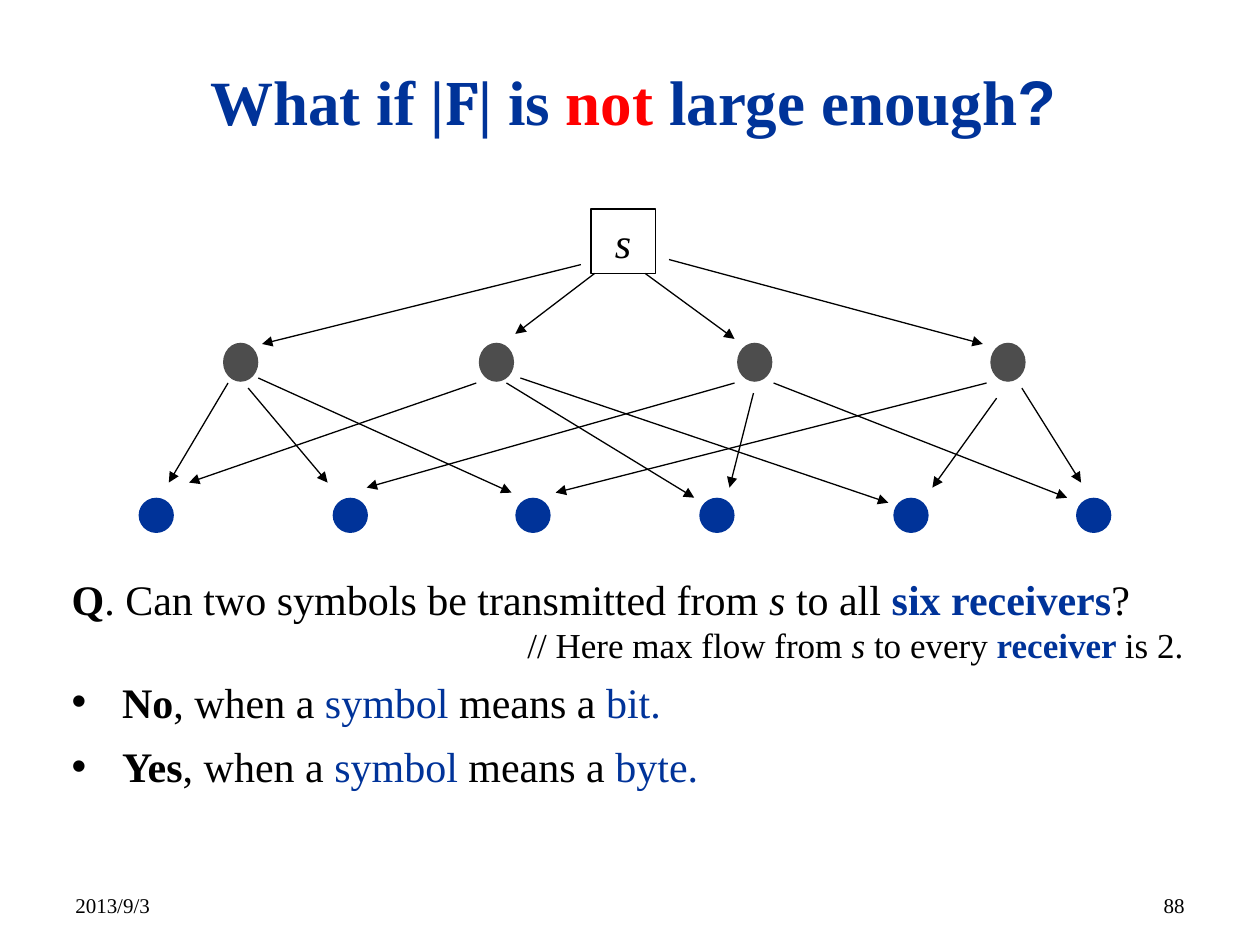
from lxml.etree import SubElement
from pptx import Presentation
from pptx.dml.color import RGBColor
from pptx.enum.shapes import MSO_CONNECTOR, MSO_SHAPE
from pptx.enum.text import MSO_ANCHOR, PP_ALIGN
from pptx.oxml.ns import qn
from pptx.util import Inches, Pt

BLACK = RGBColor(0x00, 0x00, 0x00)
WHITE = RGBColor(0xFF, 0xFF, 0xFF)
NAVY = RGBColor(0x00, 0x33, 0x99)
RED = RGBColor(0xFF, 0x00, 0x00)
GRAY = RGBColor(0x4D, 0x4D, 0x4D)

SERIF = "Times New Roman"
BOLD = {"bold": True}
ITALIC = {"italic": True}
BLUE = {"color": NAVY}
KEY_TERM = {"color": NAVY, "bold": True}

# Positions inside the network box, in inches
RELAY_LEFTS, RELAY_TOP = (0.67, 2.7, 4.75, 6.76), 1.06
RECEIVER_LEFTS, RECEIVER_TOP = (0, 1.54, 2.99, 4.45, 5.99, 7.44), 2.29
SOURCE_ARROWS = [
    (3.62, 0.51, 2.99, 0.99), (3.51, 0.44, 0.98, 1.07),
    (4.02, 0.51, 4.73, 1.03), (4.21, 0.4, 6.7, 1.07),
]
RELAY_ARROWS = [
    (0.71, 1.38, 0.24, 2.17), (0.87, 1.42, 1.5, 2.17), (0.95, 1.34, 2.96, 2.25),
    (2.68, 1.38, 0.4, 2.17), (2.92, 1.38, 4.41, 2.29), (3.03, 1.34, 5.95, 2.33),
    (4.73, 1.38, 1.81, 2.21), (4.88, 1.46, 4.69, 2.21), (5.04, 1.38, 7.37, 2.29),
    (6.73, 1.38, 3.31, 2.25), (6.81, 1.5, 6.3, 2.21), (7.01, 1.42, 7.48, 2.17),
]


def add_runs(paragraph, runs, size):
    """Add (text, format) pairs; a format overrides the plain black serif."""
    for text, changes in runs:
        run = paragraph.add_run()
        run.text = text
        style = {"name": SERIF, "size": Pt(size), "color": BLACK, **changes}
        run.font.color.rgb = style.pop("color")
        for attribute, value in style.items():
            setattr(run.font, attribute, value)


def add_text_frame(slide, left, top, width, height, anchor=MSO_ANCHOR.TOP):
    box = slide.shapes.add_textbox(
        Inches(left), Inches(top), Inches(width), Inches(height))
    box.text_frame.word_wrap = True
    box.text_frame.vertical_anchor = anchor
    return box.text_frame


def add_line(slide, box, runs, size, align, anchor):
    paragraph = add_text_frame(slide, *box, anchor).paragraphs[0]
    paragraph.alignment = align
    add_runs(paragraph, runs, size)


def add_node(slide, preset, left, top, width, height, fill):
    node = slide.shapes.add_shape(
        preset, Inches(left), Inches(top), Inches(width), Inches(height))
    node.shadow.inherit = False
    node.fill.solid()
    node.fill.fore_color.rgb = fill
    node.line.fill.background()
    return node


def add_arrow(slide, x1, y1, x2, y2):
    arrow = slide.shapes.add_connector(
        MSO_CONNECTOR.STRAIGHT, Inches(x1), Inches(y1), Inches(x2), Inches(y2))
    arrow.line.color.rgb = BLACK
    arrow.line.width = Pt(0.75)
    SubElement(arrow.line._get_or_add_ln(), qn("a:tailEnd"), type="triangle")
    SubElement(arrow._element.spPr, qn("a:effectLst"))


def add_source(slide, left, top):
    source = add_node(slide, MSO_SHAPE.RECTANGLE, left, top, 0.51, 0.51, WHITE)
    source.line.color.rgb = BLACK
    source.line.width = Pt(0.75)
    source.text_frame.word_wrap = False
    source.text_frame.vertical_anchor = MSO_ANCHOR.MIDDLE
    label = source.text_frame.paragraphs[0]
    label.alignment = PP_ALIGN.CENTER
    add_runs(label, [("s", ITALIC)], 24)


def add_network(slide, left, top):
    for relay_left in RELAY_LEFTS:
        add_node(slide, MSO_SHAPE.OVAL, left + relay_left, top + RELAY_TOP,
                 0.28, 0.31, GRAY)
    add_source(slide, left + 3.59, top)
    for receiver_left in RECEIVER_LEFTS:
        add_node(slide, MSO_SHAPE.OVAL, left + receiver_left, top + RECEIVER_TOP,
                 0.28, 0.28, NAVY)
    for x1, y1, x2, y2 in SOURCE_ARROWS + RELAY_ARROWS:
        add_arrow(slide, left + x1, top + y1, left + x2, top + y2)


def add_bullet(paragraph):
    properties = paragraph._p.get_or_add_pPr()
    properties.set("marL", str(Inches(0.4)))
    properties.set("indent", str(-Inches(0.4)))
    SubElement(properties, qn("a:buFont"), typeface="Arial")
    SubElement(properties, qn("a:buChar"), char="•")


def add_question(slide, left, top, width, height):
    frame = add_text_frame(slide, left, top, width, height)
    question = frame.paragraphs[0]
    question.space_before = Pt(8)
    add_runs(question, [
        ("Q", BOLD), (". Can two symbols be transmitted from ", {}), ("s", ITALIC),
        (" to all ", {}), ("six receivers", KEY_TERM), ("?", {})], 24)

    remark = frame.add_paragraph()
    remark.alignment = PP_ALIGN.RIGHT
    add_runs(remark, [
        ("// Here max flow from ", {}), ("s", ITALIC), (" to every ", {}),
        ("receiver ", KEY_TERM), ("is 2.", {})], 20)

    for answer, unit, gap in (("No", "bit", 6), ("Yes", "byte", 8)):
        paragraph = frame.add_paragraph()
        paragraph.space_before = Pt(gap)
        add_bullet(paragraph)
        add_runs(paragraph, [
            (answer, BOLD), (", when a ", {}), ("symbol ", BLUE),
            ("means a", {}), (f" {unit}.", BLUE)], 24)


def add_title(slide, box):
    title = [
        ("What if |", KEY_TERM), ("F", {**KEY_TERM, "name": "Cambria"}),
        ("| is ", KEY_TERM), ("not ", {"color": RED, "bold": True}),
        ("large enough", KEY_TERM), ("?", {**KEY_TERM, "name": "Arial"})]
    add_line(slide, box, title, 36, PP_ALIGN.CENTER, MSO_ANCHOR.MIDDLE)


def add_footer(slide, left, top, width, height):
    column = 2.33
    for x, text, align in ((left, "2013/9/3", PP_ALIGN.LEFT),
                           (left + width - column, "88", PP_ALIGN.RIGHT)):
        add_line(slide, (x, top, column, height), [(text, {})], 12,
                 align, MSO_ANCHOR.BOTTOM)


def main():
    presentation = Presentation()
    presentation.slide_width = Inches(10)
    presentation.slide_height = Inches(7.5)
    slide = presentation.slides.add_slide(presentation.slide_layouts[6])
    add_footer(slide, 0.5, 6.83, 9, 0.5)
    add_title(slide, (0.28, 0.4, 9.49, 0.79))
    add_question(slide, 0.47, 4.5, 9.02, 1.85)
    add_network(slide, 1.1, 1.66)
    presentation.save("out.pptx")


if __name__ == "__main__":
    main()
